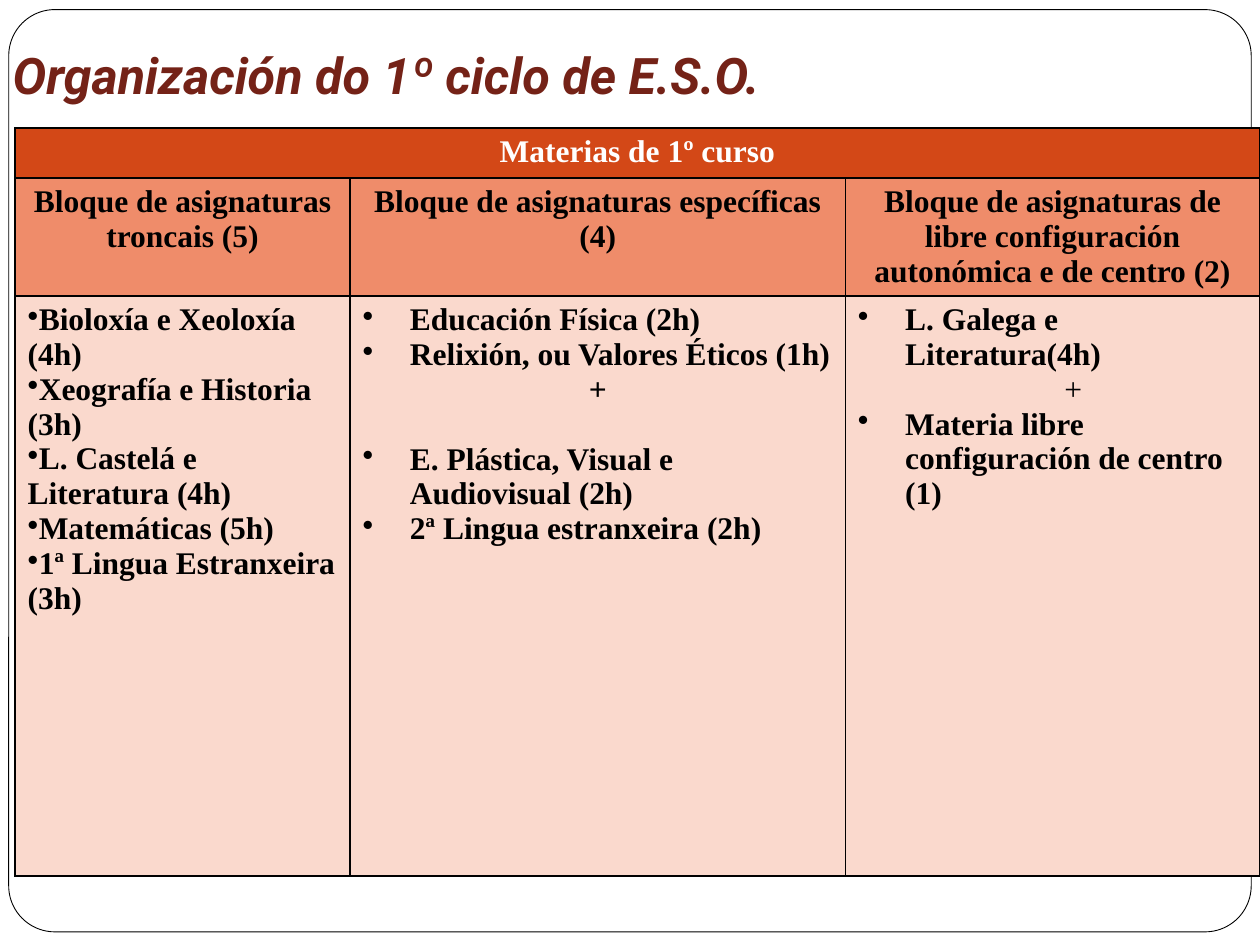
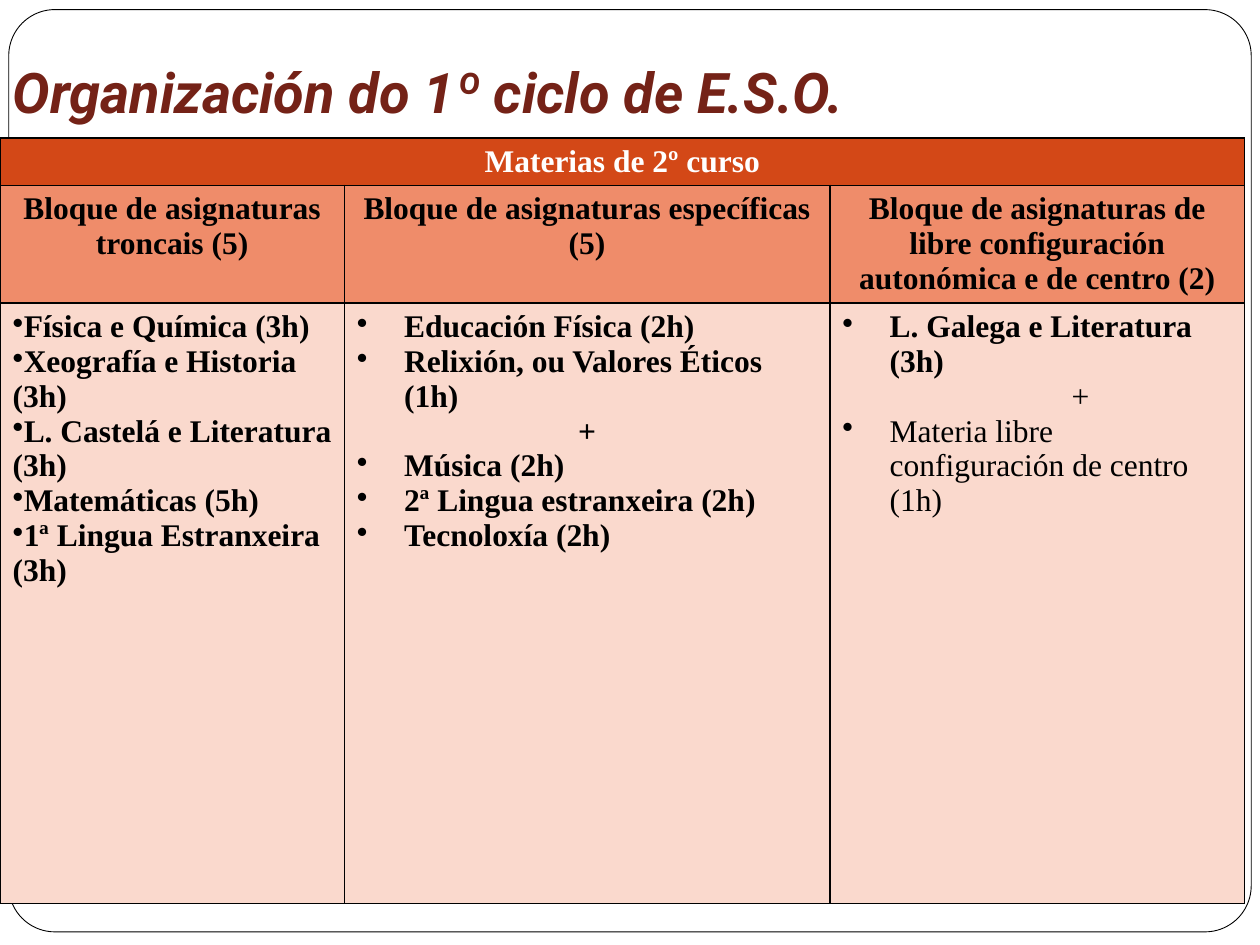
import pptx
import pptx.util
import pptx.dml.color
import pptx.enum.shapes
import pptx.enum.text
import pptx.oxml
import pptx.oxml.ns

Pt = pptx.util.Pt
RGB = pptx.dml.color.RGBColor.from_string
ALIGN = pptx.enum.text.PP_ALIGN
ANCHOR = pptx.enum.text.MSO_ANCHOR

THEME = {
    "paper": RGB("FFFFFF"),
    "line": RGB("000000"),
    "title": {"name": "Roboto", "bold": True, "italic": True},
    "title_color": RGB("742217"),
    "cell": {"name": "Times New Roman", "size": Pt(18)},
    "row_fills": [RGB("D34817"), RGB("EF8C6A"), RGB("FAD9CD")],
    "row_inks": [RGB("FFFFFF"), RGB("000000"), RGB("000000")],
    "frame_width": Pt(0.5),
    "border_width": Pt(1),
    "hang": 27,
}

TITLE = "Organización do 1º ciclo de E.S.O."
CORE = "Bloque de asignaturas troncais (5)"
FREE = "Bloque de asignaturas de libre configuración autonómica e de centro (2)"
SPECIFIC = "Bloque de asignaturas específicas"

CENTER = {"align": ALIGN.CENTER}
FLUSH = {"bullet": True}
HANG = {"bullet": True, "left": THEME["hang"], "indent": -THEME["hang"]}
PLAIN = {"bold": False}

COURSES = [
    {
        "title_box": (0, 21.6, 720, 45.4),
        "title_size": Pt(28.8),
        "origin": (8.6, 73.2),
        "cols": [191.5, 283, 236.9],
        "rows": [28.6, 67.4, 331.4],
        "band": "Materias de 1º curso",
        "heads": [[CORE], [SPECIFIC + " (4)"], [FREE]],
        "core": [
            "Bioloxía e Xeoloxía (4h)",
            "Xeografía e Historia (3h)",
            "L. Castelá e Literatura (4h)",
            "Matemáticas (5h)",
            "1ª Lingua Estranxeira (3h)",
        ],
        "specific": [
            ("Educación Física (2h)", HANG),
            ("Relixión, ou Valores Éticos (1h)", HANG),
            ("+", CENTER),
            ("E. Plástica, Visual e Audiovisual (2h)", HANG | {"before": 20}),
            ("2ª Lingua estranxeira (2h)", HANG),
        ],
        "free": [
            ("L. Galega e Literatura(4h)", HANG),
            ("+", PLAIN | {"left": 118}),
            ("Materia libre configuración de centro (1)", HANG),
        ],
    },
    {
        "title_box": (0, 0, 720, 78.5),
        "title_size": Pt(32),
        "origin": (0, 78.8),
        "cols": [196.8, 277.4, 237.1],
        "rows": [27.2, 67.2, 343.2],
        "band": "Materias de 2º curso",
        "heads": [[CORE], [SPECIFIC, "(5)"], [FREE]],
        "core": [
            "Física e Química (3h)",
            "Xeografía e Historia (3h)",
            "L. Castelá e Literatura (3h)",
            "Matemáticas (5h)",
            "1ª Lingua Estranxeira (3h)",
        ],
        "specific": [
            ("Educación Física (2h)", HANG),
            ("Relixión, ou Valores Éticos (1h)", HANG),
            ("+", CENTER),
            ("Música (2h)", HANG),
            ("2ª Lingua estranxeira (2h)", HANG),
            ("Tecnoloxía (2h)", HANG),
        ],
        "free": [
            ("L. Galega e Literatura (3h)", HANG),
            ("+", PLAIN | {"left": 131}),
            ("Materia libre configuración de centro (1h)", HANG | PLAIN),
        ],
    },
]


def set_all(obj, values):
    for name, value in values.items():
        setattr(obj, name, value)


def fill_cell(cell, items, fill, ink):
    cell.fill.solid()
    cell.fill.fore_color.rgb = fill
    tcPr = cell._tc.get_or_add_tcPr()
    for i, side in enumerate(["lnL", "lnR", "lnT", "lnB"]):
        tcPr.insert(i, pptx.oxml.parse_xml(
            f'<a:{side} {pptx.oxml.ns.nsdecls("a")} w="{THEME["border_width"]}">'
            f'<a:solidFill><a:srgbClr val="{THEME["line"]}"/></a:solidFill></a:{side}>'))
    for i, (text, fmt) in enumerate(items):
        tf = cell.text_frame
        p = tf.paragraphs[0] if i == 0 else tf.add_paragraph()
        set_all(p, {"alignment": fmt.get("align", ALIGN.LEFT),
                    "space_before": Pt(fmt.get("before", 0))})
        pPr = p._p.get_or_add_pPr()
        pPr.set("marL", str(Pt(fmt.get("left", 0))))
        pPr.set("indent", str(Pt(fmt.get("indent", 0))))
        if fmt.get("bullet"):
            pPr.append(pptx.oxml.parse_xml(
                f'<a:buChar {pptx.oxml.ns.nsdecls("a")} char="•"/>'))
        r = p.add_run()
        r.text = text
        set_all(r.font, THEME["cell"] | {"bold": fmt.get("bold", True)})
        r.font.color.rgb = ink


prs = pptx.Presentation()
set_all(prs, {"slide_width": Pt(720), "slide_height": Pt(540)})
layout = prs.slide_layouts[5]
slides = [prs.slides.add_slide(layout) for course in COURSES]

frame = slides[0].shapes.add_shape(
    pptx.enum.shapes.MSO_SHAPE.ROUNDED_RECTANGLE, Pt(5), Pt(5.5), Pt(710), Pt(527))
frame.adjustments[0] = 0.05
frame.shadow.inherit = False
frame.fill.solid()
frame.fill.fore_color.rgb = THEME["paper"]
frame.line.color.rgb = THEME["line"]
frame.line.width = THEME["frame_width"]
layout.shapes._spTree.insert(2, frame._element)

for s, course in zip(slides, COURSES):
    title = s.shapes.title
    set_all(title, dict(zip(["left", "top", "width", "height"],
                            map(Pt, course["title_box"]))))
    tf = title.text_frame
    set_all(tf, {"vertical_anchor": ANCHOR.BOTTOM, "word_wrap": True,
                 "auto_size": pptx.enum.text.MSO_AUTO_SIZE.NONE,
                 "margin_left": Pt(7.2), "margin_right": Pt(7.2),
                 "margin_top": Pt(3.6), "margin_bottom": Pt(7.2)})
    p = tf.paragraphs[0]
    p.alignment = ALIGN.LEFT
    r = p.add_run()
    r.text = TITLE
    set_all(r.font, THEME["title"] | {"size": course["title_size"]})
    r.font.color.rgb = THEME["title_color"]

    left, top = course["origin"]
    table = s.shapes.add_table(3, 3, Pt(left), Pt(top), Pt(sum(course["cols"])),
                               Pt(sum(course["rows"]))).table
    set_all(table, {"first_row": False, "horz_banding": False})
    for col, width in zip(table.columns, course["cols"]):
        col.width = Pt(width)
    for row, height in zip(table.rows, course["rows"]):
        row.height = Pt(height)
    table.cell(0, 0).merge(table.cell(0, 2))

    grid = [
        [[(course["band"], CENTER)], [], []],
        [[(line, CENTER) for line in head] for head in course["heads"]],
        [[(text, FLUSH) for text in course["core"]], course["specific"], course["free"]],
    ]
    for i, cells in enumerate(grid):
        for j, items in enumerate(cells):
            fill_cell(table.cell(i, j), items, THEME["row_fills"][i], THEME["row_inks"][i])

prs.save("out.pptx")
